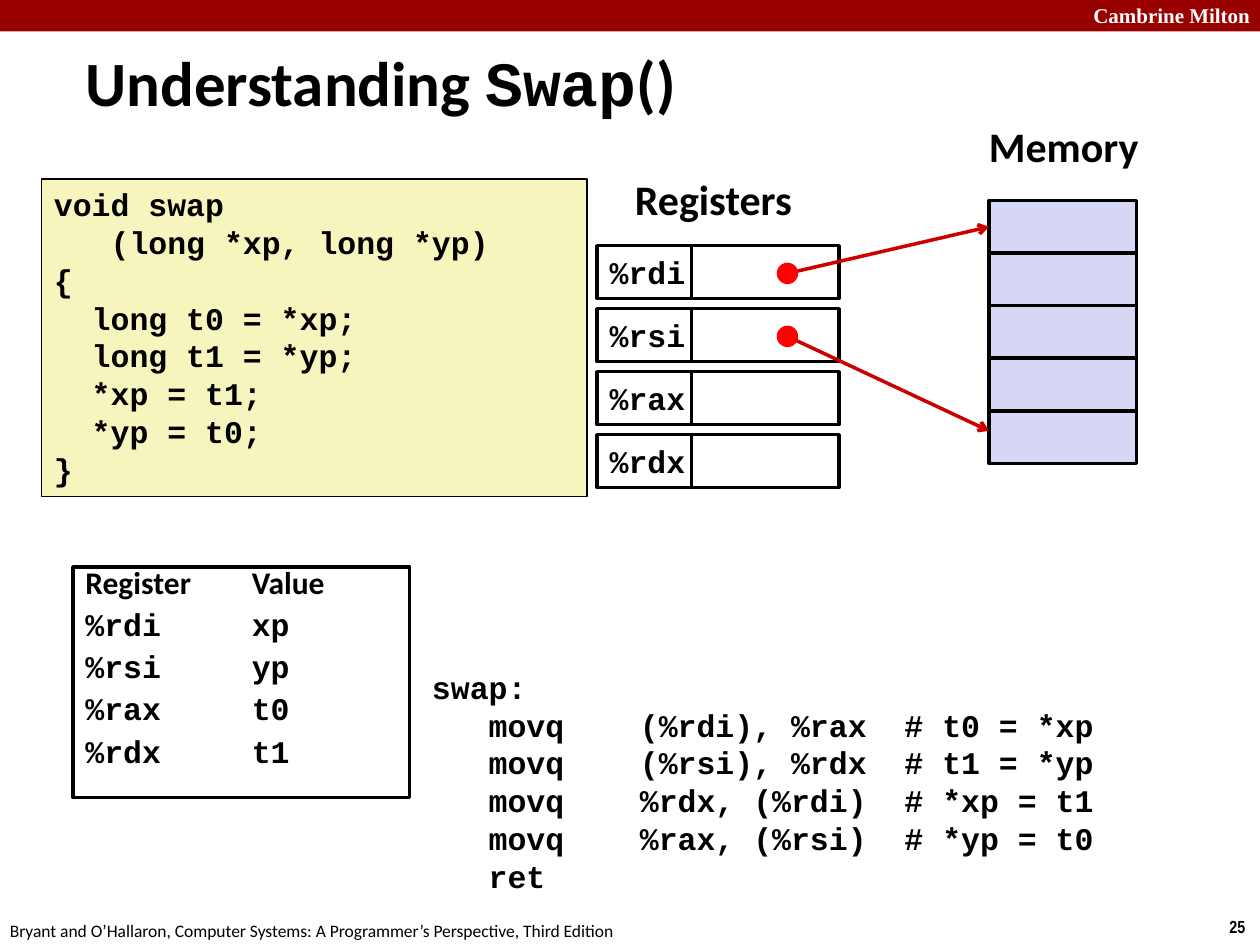
from pptx import Presentation
from pptx.dml.color import RGBColor
from pptx.enum.shapes import MSO_CONNECTOR, MSO_SHAPE
from pptx.enum.text import MSO_ANCHOR, PP_ALIGN
from pptx.oxml.ns import qn
from pptx.util import Inches, Pt
from lxml.etree import SubElement

BLACK = RGBColor(0x00, 0x00, 0x00)
WHITE = RGBColor(0xFF, 0xFF, 0xFF)
BANNER_RED = RGBColor(0x99, 0x00, 0x00)
ARROW_RED = RGBColor(0xCC, 0x00, 0x00)
DOT_RED = RGBColor(0xFF, 0x00, 0x00)
CODE_YELLOW = RGBColor(0xF6, 0xF5, 0xBD)
MEMORY_BLUE = RGBColor(0xD6, 0xD6, 0xF5)

SANS, MONO = "Calibri", "Courier New"
CHAR = 0.15  # width of one 18 pt monospaced character

presentation = Presentation()
presentation.slide_width, presentation.slide_height = Inches(10), Inches(7.5)
slide = presentation.slides.add_slide(presentation.slide_layouts[6])


def add_box(at, fill=None, border=0, kind=MSO_SHAPE.RECTANGLE):
    """Add a preset shape at (left, top, width, height) inches."""
    box = slide.shapes.add_shape(kind, *map(Inches, at))
    box.shadow.inherit = False
    if fill is None:
        box.fill.background()
    else:
        box.fill.solid()
        box.fill.fore_color.rgb = fill
    if border:
        box.line.color.rgb = BLACK
        box.line.width = Pt(border)
    else:
        box.line.fill.background()
    return box


def write(box, lines, size=18, color=BLACK, bold=True, wrap=True,
          anchor=MSO_ANCHOR.TOP, stops=(), layout=None):
    """Fill a box with lines, each a list of (text, font) runs."""
    frame = box.text_frame
    for name, value in {"word_wrap": wrap, "vertical_anchor": anchor}.items():
        setattr(frame, name, value)
    for index, runs in enumerate(lines):
        paragraph = frame.add_paragraph() if index else frame.paragraphs[0]
        for name, value in {"alignment": PP_ALIGN.LEFT, **(layout or {})}.items():
            setattr(paragraph, name, value)
        if stops:
            tabs = SubElement(paragraph._p.get_or_add_pPr(), qn("a:tabLst"))
            for stop in stops:
                SubElement(tabs, qn("a:tab"), pos=str(Inches(stop)), algn="l")
        for text, font in runs:
            run = paragraph.add_run()
            run.text = text
            for name, value in {"name": font, "size": Pt(size), "bold": bold}.items():
                setattr(run.font, name, value)
            run.font.color.rgb = color


# Banner and footer
add_box((0, 0, 10, 0.25), BANNER_RED)

# Headings and other free text
captions = [
    ((8.44, -0.03, 1.58, 0.3), [("Cambrine Milton", "Times New Roman")],
     {"size": 12, "color": WHITE, "layout": {"alignment": PP_ALIGN.RIGHT}}),
    ((9.66, 7.22, 0.34, 0.27), [("25", "Arial Narrow")], {"size": 10, "wrap": False}),
    ((-0.02, 7.25, 5.08, 0.27),
     [("Bryant and O’Hallaron, Computer Systems: A Programmer’s Perspective, "
       "Third Edition", SANS)],
     {"size": 10, "bold": False, "wrap": False}),
    ((0.58, 0.33, 6.97, 0.63),
     [("Understanding ", SANS), ("Swap", MONO), ("()", SANS)],
     {"size": 36, "anchor": MSO_ANCHOR.MIDDLE}),
    ((7.75, 0.91, 1.4, 0.5), [("Memory", SANS)], {"size": 24, "wrap": False}),
    ((4.94, 1.33, 1.48, 0.5), [("Registers", SANS)], {"size": 24, "wrap": False}),
]
for at, runs, style in captions:
    write(slide.shapes.add_textbox(*map(Inches, at)), [runs], **style)

# C source
c_source = [
    "void swap",
    "\t\t(long *xp, long *yp)",
    "{",
    "\tlong t0 = *xp;",
    "\tlong t1 = *yp;",
    "\t*xp = t1;",
    "\t*yp = t0;",
    "}",
]
write(add_box((0.33, 1.42, 4.33, 2.52), CODE_YELLOW, 1),
      [[(line, MONO)] for line in c_source], stops=(2 * CHAR, 3 * CHAR))

# Registers and memory cells
CELL_WIDTH, CELL_HEIGHT = 1.17, 0.42
NAME_LEFT, NAME_WIDTH = 4.74, 0.75
REGISTER_TOP, REGISTER_PITCH = 1.95, 0.5
MEMORY_LEFT, MEMORY_TOP, MEMORY_BOTTOM = 7.85, 1.59, 3.68
MEMORY_CELLS = 5

contents = {"%rdi": "xp", "%rsi": "yp", "%rax": "t0", "%rdx": "t1"}
for row, register in enumerate(contents):
    top = REGISTER_TOP + row * REGISTER_PITCH
    write(add_box((NAME_LEFT, top, NAME_WIDTH, CELL_HEIGHT), WHITE, 2),
          [[(register, MONO)]], wrap=False, anchor=MSO_ANCHOR.MIDDLE)
    add_box((NAME_LEFT + NAME_WIDTH, top, CELL_WIDTH, CELL_HEIGHT), WHITE, 2)

memory_pitch = (MEMORY_BOTTOM - MEMORY_TOP) / MEMORY_CELLS
for row in range(MEMORY_CELLS):
    add_box((MEMORY_LEFT, MEMORY_TOP + row * memory_pitch, CELL_WIDTH, memory_pitch),
            MEMORY_BLUE, 2)

# Pointers from the first two registers into memory
DOT_X, DOT_SIZE = 6.25, 0.17
for row, target_y in enumerate((1.8, 3.42)):
    dot_y = REGISTER_TOP + row * REGISTER_PITCH + 0.22
    pointer = slide.shapes.add_connector(
        MSO_CONNECTOR.STRAIGHT,
        *map(Inches, (DOT_X, dot_y, MEMORY_LEFT, target_y)))
    pointer.line.color.rgb = ARROW_RED
    pointer.line.width = Pt(2)
    SubElement(pointer.line._get_or_add_ln(), qn("a:tailEnd"), type="arrow")
    SubElement(pointer._element.spPr, qn("a:effectLst"))
    add_box((DOT_X - DOT_SIZE / 2, dot_y - DOT_SIZE / 2, DOT_SIZE, DOT_SIZE),
            DOT_RED, kind=MSO_SHAPE.OVAL)

# Register allocation
allocation = [[("Register\tValue", SANS)]]
allocation += [[(f"{register}\t{value}", MONO)] for register, value in contents.items()]
write(add_box((0.58, 4.5, 2.67, 1.83), border=2), allocation, stops=(1.32,),
      layout={"line_spacing": 0.7, "space_before": Pt(9)})

# Assembly
assembly = [
    "swap:",
    "\tmovq\t(%rdi), %rax\t# t0 = *xp",
    "\tmovq\t(%rsi), %rdx\t# t1 = *yp",
    "\tmovq\t%rdx, (%rdi)\t# *xp = t1",
    "\tmovq\t%rax, (%rsi)\t# *yp = t0",
    "\tret",
]
write(slide.shapes.add_textbox(*map(Inches, (3.33, 5.25, 6.42, 1.92))),
      [[(line, MONO)] for line in assembly],
      stops=(3 * CHAR, 11 * CHAR, 25 * CHAR))

presentation.save("out.pptx")
